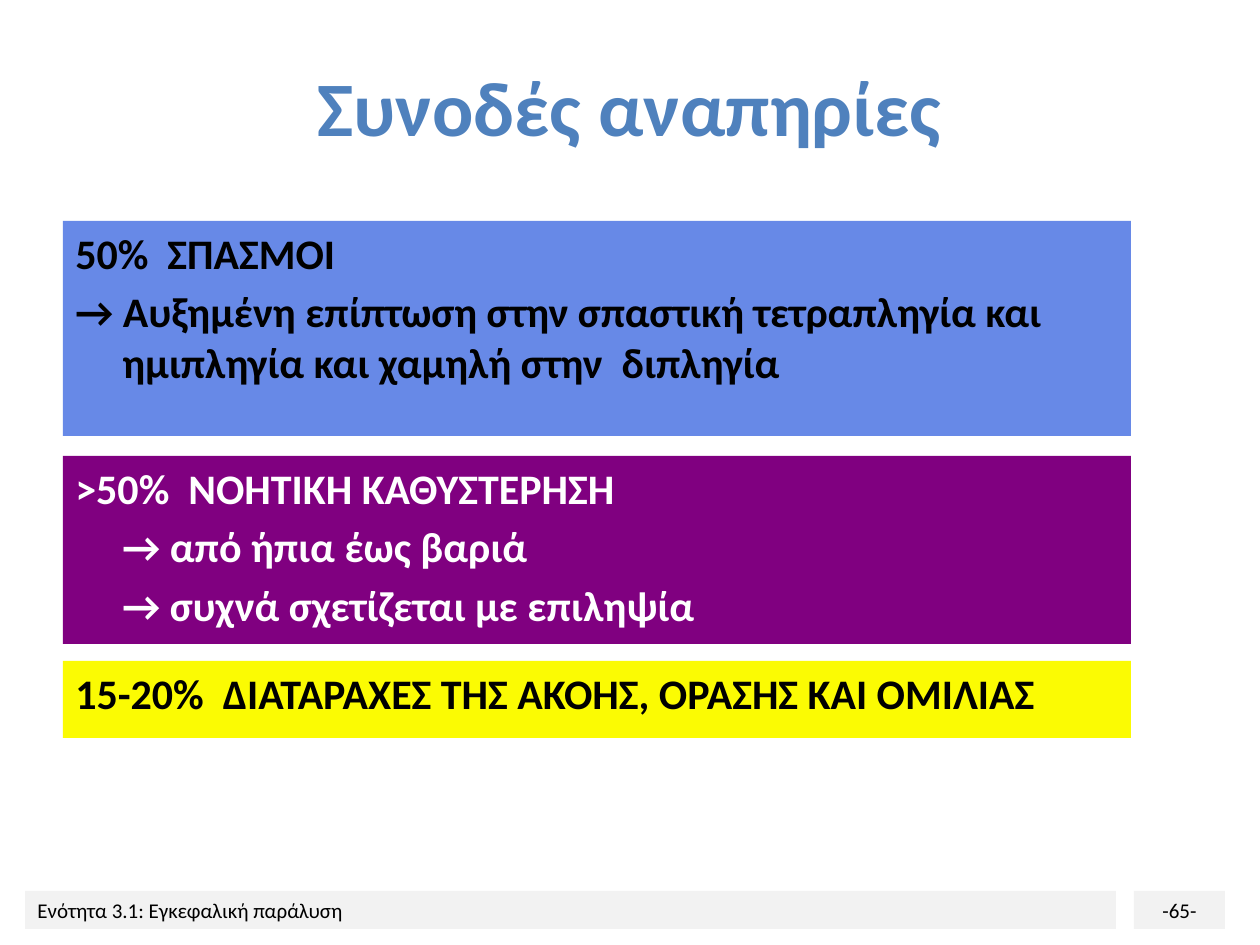
from dataclasses import dataclass

import pptx
import pptx.dml.color
import pptx.enum.shapes
import pptx.enum.text
import pptx.util

ALIGN = pptx.enum.text.PP_ALIGN
ANCHOR = pptx.enum.text.MSO_ANCHOR


@dataclass(frozen=True)
class Theme:
    font: str = "Calibri"
    title_size: int = 44
    body_size: int = 24
    footer_size: int = 12
    title: str = "4F81BD"
    dark: str = "000000"
    light: str = "FFFFFF"
    footer: str = "F2F2F2"
    seizures: str = "6789E7"
    cognition: str = "800080"
    senses: str = "FBFB03"


THEME = Theme()
PAGE = (1260, 945)
TITLE = (63, 38, 1134, 136)
PANEL_LEFT, PANEL_WIDTH = 63, 1068
HANGING = 47
FOOTER_TOP, FOOTER_HEIGHT = 891, 38

# Each line is (text, whether its first line hangs out to the left).
PANELS = [
    (221, 215, THEME.seizures, THEME.dark, [
        ("50%  ΣΠΑΣΜΟΙ", True),
        ("→ Αυξημένη επίπτωση στην σπαστική τετραπληγία και "
         "ημιπληγία και χαμηλή στην  διπληγία", True),
    ]),
    (456, 188, THEME.cognition, THEME.light, [
        (">50%  ΝΟΗΤΙΚΗ ΚΑΘΥΣΤΕΡΗΣΗ", True),
        ("→ από ήπια έως βαριά", False),
        ("→ συχνά σχετίζεται με επιληψία", False),
    ]),
    (661, 77, THEME.senses, THEME.dark, [
        ("15-20%  ΔΙΑΤΑΡΑΧΕΣ ΤΗΣ ΑΚΟΗΣ, ΟΡΑΣΗΣ ΚΑΙ ΟΜΙΛΙΑΣ", True),
    ]),
]


def px(length):
    return pptx.util.Emu(round(length * 914400 / 126))


def color(code):
    return pptx.dml.color.RGBColor.from_string(code)


def write(para, text, size, code, bold=False, align=ALIGN.LEFT):
    para.text = text
    para.alignment = align
    for span in para.runs:
        span.font.name = THEME.font
        span.font.size = pptx.util.Pt(size)
        span.font.bold = bold
        span.font.color.rgb = color(code)


def add_block(page, box, fill, anchor):
    """Add a plain filled rectangle and return its text frame."""
    block = page.shapes.add_shape(
        pptx.enum.shapes.MSO_SHAPE.RECTANGLE, *map(px, box))
    block.shadow.inherit = False
    block.fill.solid()
    block.fill.fore_color.rgb = color(fill)
    block.line.fill.background()
    block.text_frame.word_wrap = True
    block.text_frame.vertical_anchor = anchor
    return block.text_frame


def place_title(page, box, text):
    title = page.shapes.title
    title.left, title.top, title.width, title.height = map(px, box)
    title.text_frame.vertical_anchor = ANCHOR.MIDDLE
    write(title.text_frame.paragraphs[0], text, THEME.title_size,
          THEME.title, True, ALIGN.CENTER)


def add_panel(page, box, fill, ink, lines):
    frame = add_block(page, box, fill, ANCHOR.TOP)
    for number, (text, hangs) in enumerate(lines):
        para = frame.add_paragraph() if number else frame.paragraphs[0]
        write(para, text, THEME.body_size, ink, True)
        para.space_before = pptx.util.Pt(THEME.body_size * 0.2)
        indents = para._p.get_or_add_pPr()
        indents.set("marL", str(px(HANGING)))
        indents.set("indent", str(px(-HANGING if hangs else 0)))


def add_footer(page, box, text, align):
    frame = add_block(page, box, THEME.footer, ANCHOR.TOP)
    write(frame.paragraphs[0], text, THEME.footer_size, THEME.dark,
          align=align)


def main():
    deck = pptx.Presentation()
    deck.slide_width, deck.slide_height = map(px, PAGE)
    page = deck.slides.add_slide(deck.slide_layouts[5])
    add_footer(page, (25, FOOTER_TOP, 1091, FOOTER_HEIGHT),
               "Ενότητα 3.1: Εγκεφαλική παράλυση", ALIGN.LEFT)
    add_footer(page, (1134, FOOTER_TOP, 91, FOOTER_HEIGHT),
               "-65-", ALIGN.CENTER)
    place_title(page, TITLE, "Συνοδές αναπηρίες")
    for top, height, fill, ink, lines in PANELS:
        add_panel(page, (PANEL_LEFT, top, PANEL_WIDTH, height),
                  fill, ink, lines)
    deck.save("out.pptx")


if __name__ == "__main__":
    main()
